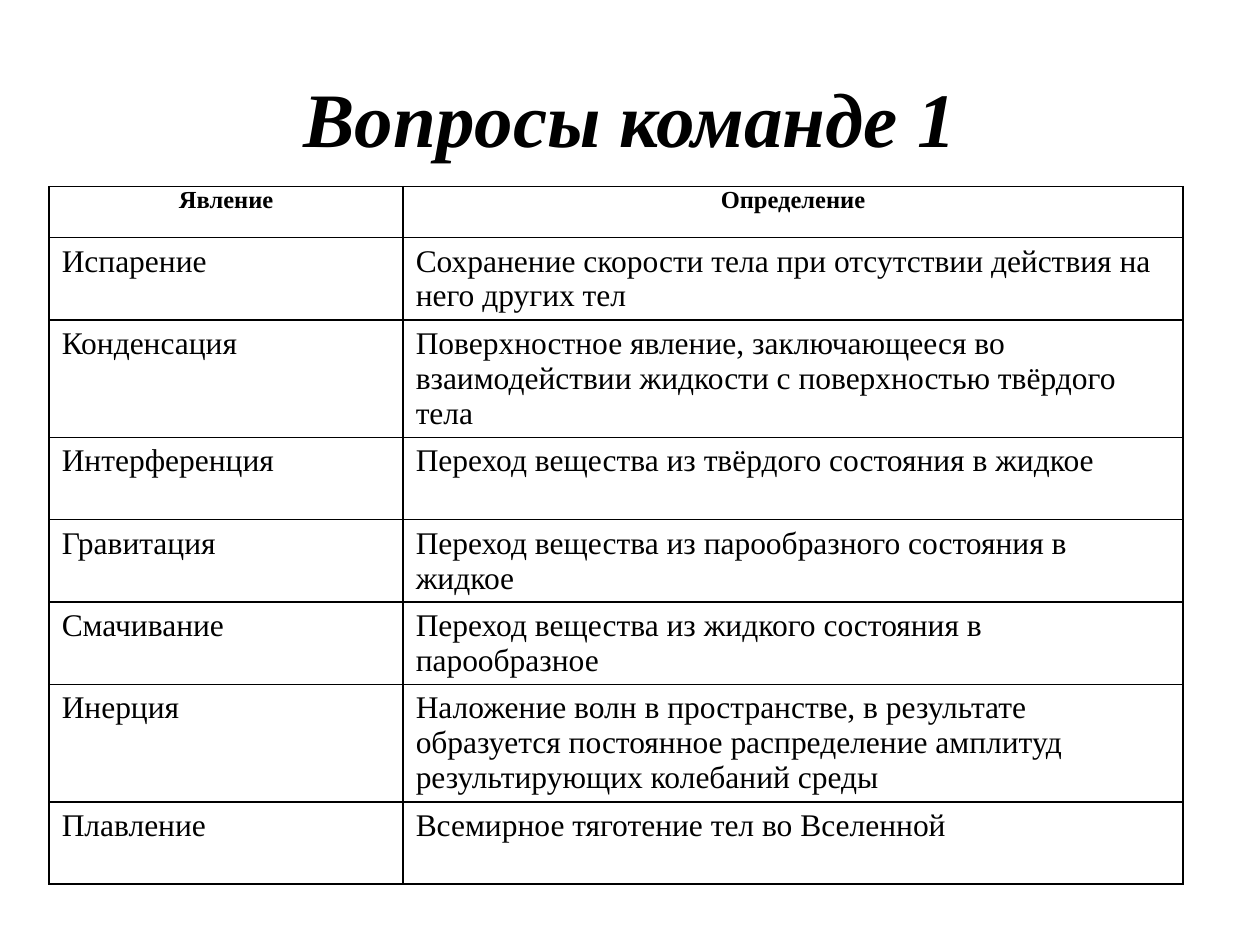
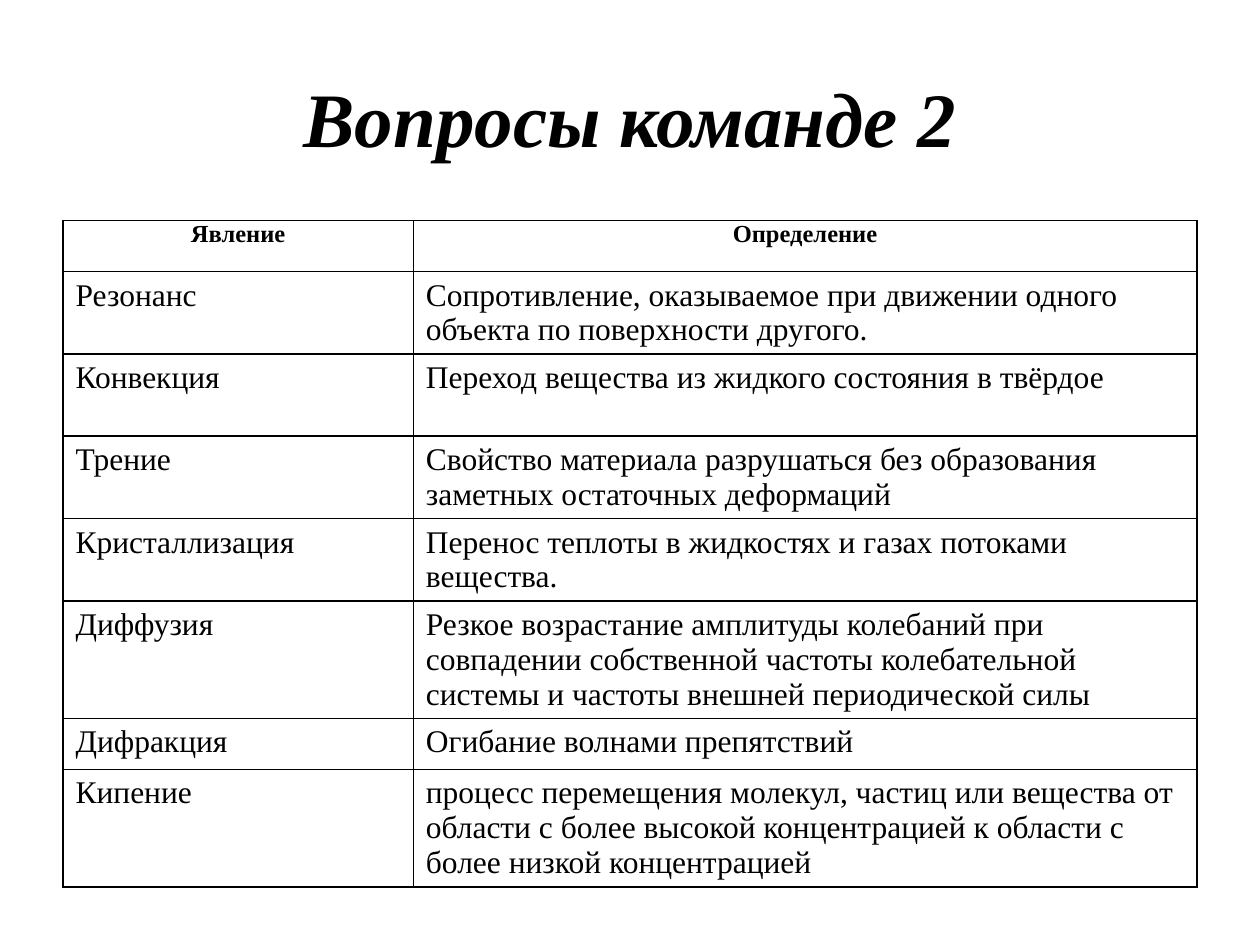
from dataclasses import dataclass

from lxml.etree import SubElement
from pptx import Presentation
from pptx.dml.color import RGBColor as Rgb
from pptx.enum.text import MSO_ANCHOR as Anchor, PP_ALIGN as Align
from pptx.oxml.ns import qn
from pptx.util import Pt


@dataclass(frozen=True)
class Theme:
    """Hold the fonts, sizes and colours that the slides share."""
    face: str = "Times New Roman"
    ink: str = "000000"
    title: int = 44
    head: int = 14
    body: int = 18
    rule: int = 1


THEME = Theme()
TITLE_BOX = (36, 21.6, 648, 90)
ROW = {1: 29.2, 2: 47, 3: 67.1}
HEAD = ("Явление", "Определение", 1)

TEAMS = [
    ("Вопросы команде 1", (28.1, 106.6, 648), 202.3, [
        ("Испарение", "Сохранение скорости тела при отсутствии действия на него других тел", 2),
        ("Конденсация", "Поверхностное явление, заключающееся во взаимодействии жидкости "
         "с поверхностью твёрдого тела", 3),
        ("Интерференция", "Переход вещества из твёрдого состояния в жидкое", 2),
        ("Гравитация", "Переход вещества из парообразного состояния в жидкое", 2),
        ("Смачивание", "Переход вещества из жидкого состояния в парообразное", 2),
        ("Инерция", "Наложение волн в пространстве, в результате образуется постоянное "
         "распределение амплитуд результирующих колебаний среды", 3),
        ("Плавление", "Всемирное тяготение тел во Вселенной", 2),
    ]),
    ("Вопросы команде 2", (36, 126, 648), 200.2, [
        ("Резонанс", "Сопротивление, оказываемое при движении одного объекта "
         "по поверхности другого.", 2),
        ("Конвекция", "Переход вещества из жидкого состояния в твёрдое", 2),
        ("Трение", "Свойство материала разрушаться без образования заметных "
         "остаточных деформаций", 2),
        ("Кристаллизация", "Перенос теплоты в жидкостях и газах потоками вещества.", 2),
        ("Диффузия", "Резкое возрастание амплитуды колебаний при совпадении собственной "
         "частоты колебательной системы и частоты внешней периодической силы", 3),
        ("Дифракция", "Огибание волнами препятствий", 1),
        ("Кипение", "процесс перемещения молекул, частиц или вещества от области с более "
         "высокой концентрацией к области с более низкой концентрацией", 3),
    ]),
]


def style(para, size, bold=False, slant=False, align=Align.LEFT):
    """Set the font and alignment of one paragraph."""
    para.alignment = align
    font = para.font
    font.name, font.size = THEME.face, Pt(size)
    font.bold, font.italic = bold, slant
    font.color.rgb = Rgb.from_string(THEME.ink)


def frame(cell):
    """Draw all four borders of a cell and leave it unfilled."""
    props = cell._tc.get_or_add_tcPr()
    for side in ("lnL", "lnR", "lnT", "lnB"):
        line = SubElement(props, qn(f"a:{side}"), w=str(Pt(THEME.rule)))
        fill = SubElement(line, qn("a:solidFill"))
        SubElement(fill, qn("a:srgbClr"), val=THEME.ink)
    cell.fill.background()


def add_title(slide, text, box):
    """Place the slide title in its box."""
    title = slide.shapes.title
    title.left, title.top, title.width, title.height = map(Pt, box)
    title.text_frame.text = text
    title.text_frame.vertical_anchor = Anchor.MIDDLE
    style(title.text_frame.paragraphs[0], THEME.title, True, True, Align.CENTER)


def add_grid(slide, rows, box, split):
    """Build the table of terms and definitions, split at the first column's width."""
    left, top, width = box
    highs = [ROW[lines] for *_, lines in rows]
    area = map(Pt, (left, top, width, sum(highs)))
    grid = slide.shapes.add_table(len(rows), 2, *area).table
    grid.first_row = grid.horz_banding = False
    for col, wide in zip(grid.columns, (split, width - split)):
        col.width = Pt(wide)
    for num, (row, high) in enumerate(zip(rows, highs)):
        grid.rows[num].height = Pt(high)
        for cell, text in zip(grid.rows[num].cells, row):
            cell.text = text
            frame(cell)
            para = cell.text_frame.paragraphs[0]
            if num == 0:
                cell.margin_left = cell.margin_right = Pt(5)
                cell.margin_top = cell.margin_bottom = 0
                style(para, THEME.head, bold=True, align=Align.CENTER)
            else:
                style(para, THEME.body)


def main():
    """Build one slide for each team and save the deck."""
    deck = Presentation()
    deck.slide_width, deck.slide_height = Pt(720), Pt(540)
    for title, box, split, terms in TEAMS:
        slide = deck.slides.add_slide(deck.slide_layouts[5])
        add_title(slide, title, TITLE_BOX)
        add_grid(slide, [HEAD, *terms], box, split)
    deck.save("out.pptx")


if __name__ == "__main__":
    main()
